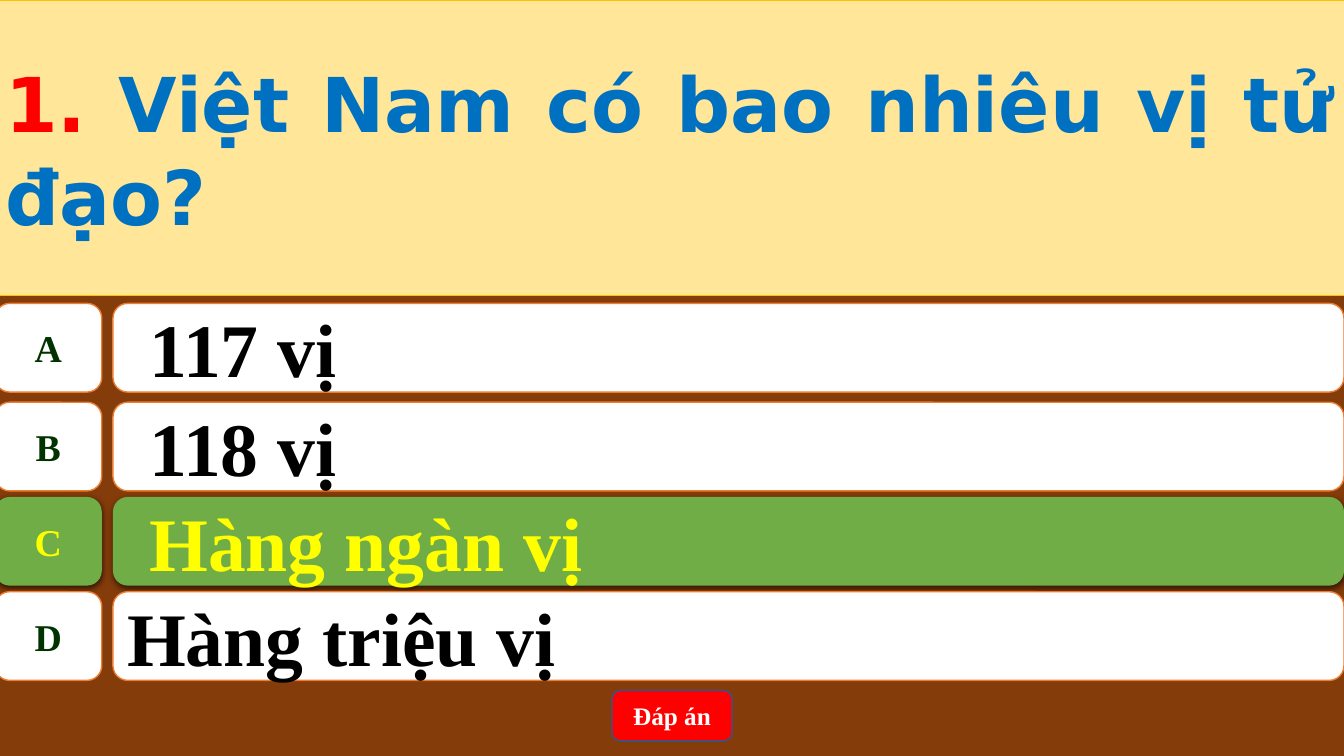
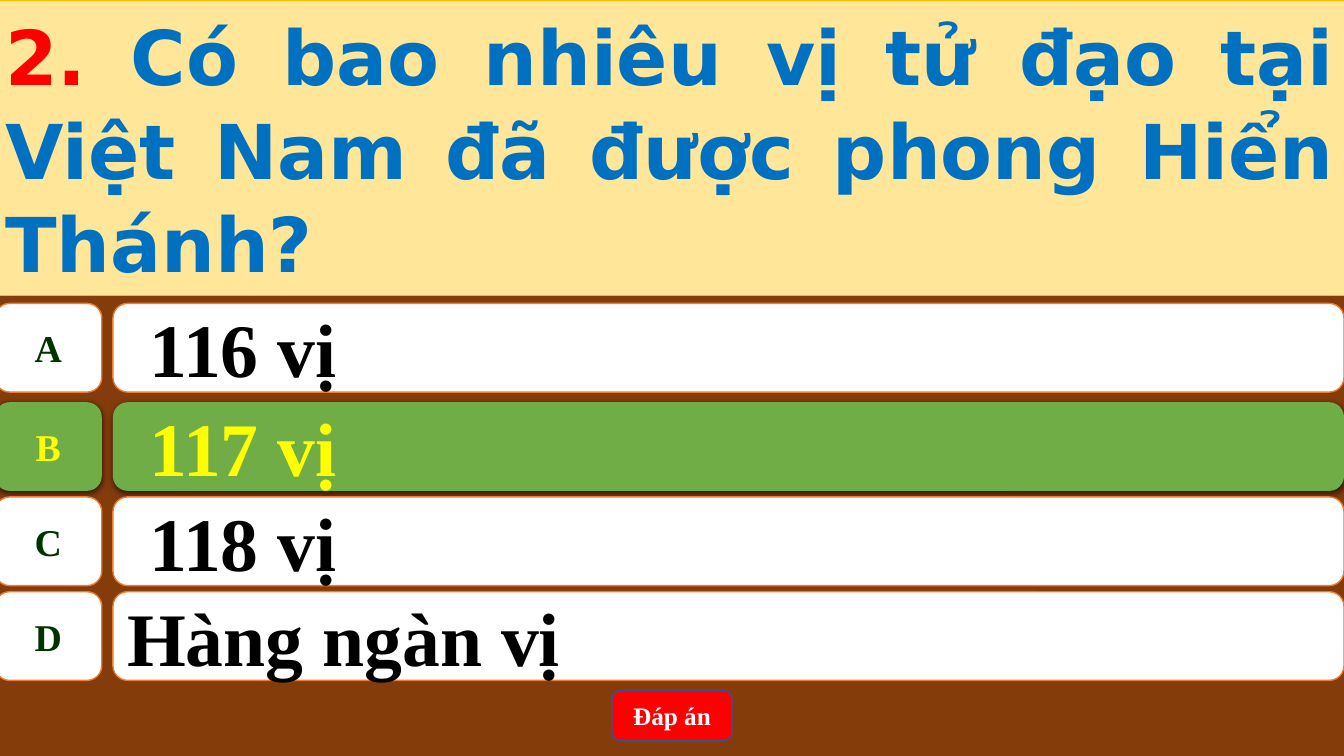
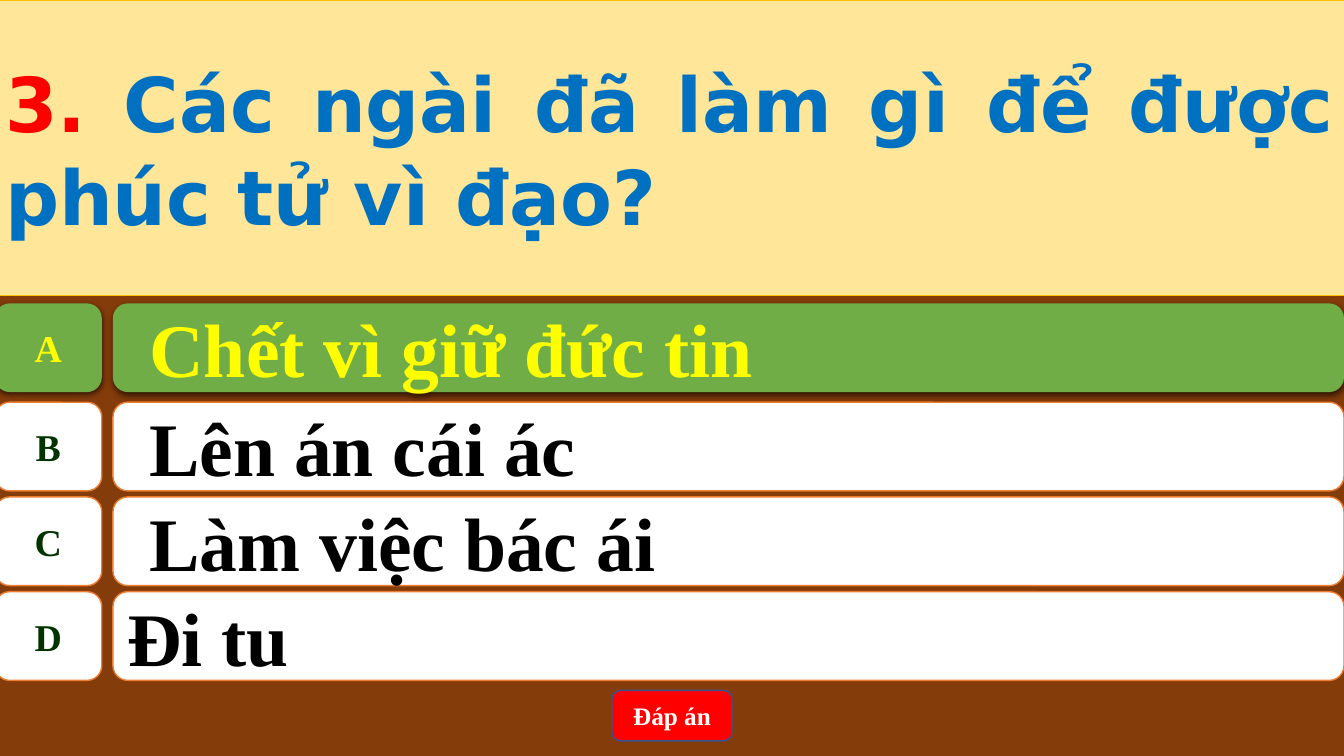
from dataclasses import dataclass

from lxml.etree import SubElement
from pptx import Presentation
from pptx.dml.color import RGBColor
from pptx.enum.shapes import MSO_SHAPE as Shape
from pptx.enum.text import MSO_ANCHOR as Anchor, MSO_AUTO_SIZE as AutoSize, PP_ALIGN as Align
from pptx.oxml.ns import qn
from pptx.util import Inches, Pt


@dataclass(frozen=True)
class Theme:
    background: str = "843C0B"
    band: str = "FFE699"
    band_line: str = "FFC000"
    number: str = "FF0000"
    question: str = "0070C0"
    tile: str = "FFFFFF"
    tile_line: str = "ED7D31"
    letter: str = "003300"
    answer: str = "000000"
    right_tile: str = "70AD47"
    right_text: str = "FFFF00"
    button: str = "FF0000"
    button_line: str = "325491"
    button_text: str = "FFFFFF"
    title_font: str = "DejaVu Sans"
    body_font: str = "Times New Roman"
    large: int = 54
    medium: int = 27
    small: int = 18


LEFT = -0.05
BAND_WIDTH, BAND_HEIGHT = 13.39, 2.93
LETTER_WIDTH = 1.06
ANSWER_LEFT, ANSWER_WIDTH = 1.12, 12.21
ROW_TOPS = (3.01, 3.99, 4.93, 5.87)
ROW_HEIGHT = 0.88

QUESTIONS = (
    ("Việt Nam có bao nhiêu vị tử đạo?",
     ("117 vị", "118 vị", "Hàng ngàn vị", "Hàng triệu vị"), "C"),
    ("Có bao nhiêu vị tử đạo tại Việt Nam đã được phong Hiển Thánh?",
     ("116 vị", "117 vị", "118 vị", "Hàng ngàn vị"), "B"),
    ("Các ngài đã làm gì để được phúc tử vì đạo?",
     ("Chết vì giữ đức tin", "Lên án cái ác", "Làm việc bác ái", "Đi tu"), "A"),
)


def rgb(value):
    return RGBColor.from_string(value)


class Quiz:
    """Holds the deck, its theme and the slide being filled."""

    def __init__(self, theme):
        self.theme = theme
        self.deck = Presentation()
        self.deck.slide_width, self.deck.slide_height = Inches(13.33), Inches(7.5)
        self.page = None
        fill = self.deck.slide_master.background.fill
        fill.solid()
        fill.fore_color.rgb = rgb(theme.background)

    def add_page(self):
        self.page = self.deck.slides.add_slide(self.deck.slide_layouts[5])

    def paint(self, shape, fill, line=None, width=1):
        shape.fill.solid()
        shape.fill.fore_color.rgb = rgb(fill)
        if line:
            shape.line.color.rgb = rgb(line)
            shape.line.width = Pt(width)
        else:
            shape.line.fill.background()

    def question(self, number, text):
        theme, title = self.theme, self.page.shapes.title
        title.left, title.top = Inches(LEFT), Inches(0)
        title.width, title.height = Inches(BAND_WIDTH), Inches(BAND_HEIGHT)
        self.paint(title, theme.band, theme.band_line, 0.5)
        frame = title.text_frame
        frame.word_wrap = True
        frame.auto_size = AutoSize.NONE
        frame.vertical_anchor = Anchor.MIDDLE
        para = frame.paragraphs[0]
        para.alignment = Align.JUSTIFY
        para.line_spacing = 1.03
        para.font.name, para.font.size, para.font.bold = theme.title_font, Pt(theme.large), True
        for words, color in ((f"{number}. ", theme.number), (text, theme.question)):
            span = para.add_run()
            span.text = words
            span.font.color.rgb = rgb(color)

    def tile(self, shapes, kind, place, text, size, colors, align=Align.CENTER, wrap=True):
        """Add a rounded tile; colors are fill, line (or None) and text."""
        fill, line, ink = colors
        box = shapes.add_shape(kind, *map(Inches, place))
        box.shadow.inherit = False
        self.paint(box, fill, line)
        frame = box.text_frame
        frame.word_wrap = wrap
        frame.vertical_anchor = Anchor.MIDDLE
        para = frame.paragraphs[0]
        para.text, para.alignment = text, align
        font = para.font
        font.name, font.size, font.bold = self.theme.body_font, Pt(size), True
        font.color.rgb = rgb(ink)
        return box

    def soft_shadow(self, shape):
        effects = shape._element.spPr.find(qn("a:effectLst"))
        shadow = SubElement(effects, qn("a:outerShdw"), blurRad=str(Pt(4.5)),
                            dist=str(Pt(1.5)), dir="5400000", rotWithShape="0")
        color = SubElement(shadow, qn("a:srgbClr"), val="000000")
        SubElement(color, qn("a:alpha"), val="63000")

    def answer_row(self, top, letter, text, right, indented):
        theme = self.theme
        if right:
            letter_colors = answer_colors = (theme.right_tile, None, theme.right_text)
        else:
            letter_colors = (theme.tile, theme.tile_line, theme.letter)
            answer_colors = (theme.tile, theme.tile_line, theme.answer)
        row = self.page.shapes.add_group_shape().shapes
        answer = self.tile(row, Shape.ROUNDED_RECTANGLE,
                           (ANSWER_LEFT, top, ANSWER_WIDTH, ROW_HEIGHT),
                           text, theme.large, answer_colors, Align.LEFT)
        label = self.tile(row, Shape.FLOWCHART_ALTERNATE_PROCESS,
                          (LEFT, top, LETTER_WIDTH, ROW_HEIGHT),
                          letter, theme.medium, letter_colors, wrap=False)
        if indented:
            props = answer.text_frame.paragraphs[0]._p.get_or_add_pPr()
            props.set("marL", str(Inches(0.5)))
            props.set("indent", str(Inches(-0.28)))
        if right:
            for box in (answer, label):
                self.soft_shadow(box)

    def answer_button(self):
        theme = self.theme
        self.tile(self.page.shapes, Shape.ROUNDED_RECTANGLE, (6.07, 6.85, 1.19, 0.5), "Đáp án",
                  theme.small, (theme.button, theme.button_line, theme.button_text))


def main():
    quiz = Quiz(Theme())
    for number, (question, answers, right) in enumerate(QUESTIONS, 1):
        quiz.add_page()
        quiz.question(number, question)
        for top, letter, answer in zip(ROW_TOPS, "ABCD", answers):
            quiz.answer_row(top, letter, answer, letter == right, indented=letter != "D")
        quiz.answer_button()
    quiz.deck.save("out.pptx")


if __name__ == "__main__":
    main()
